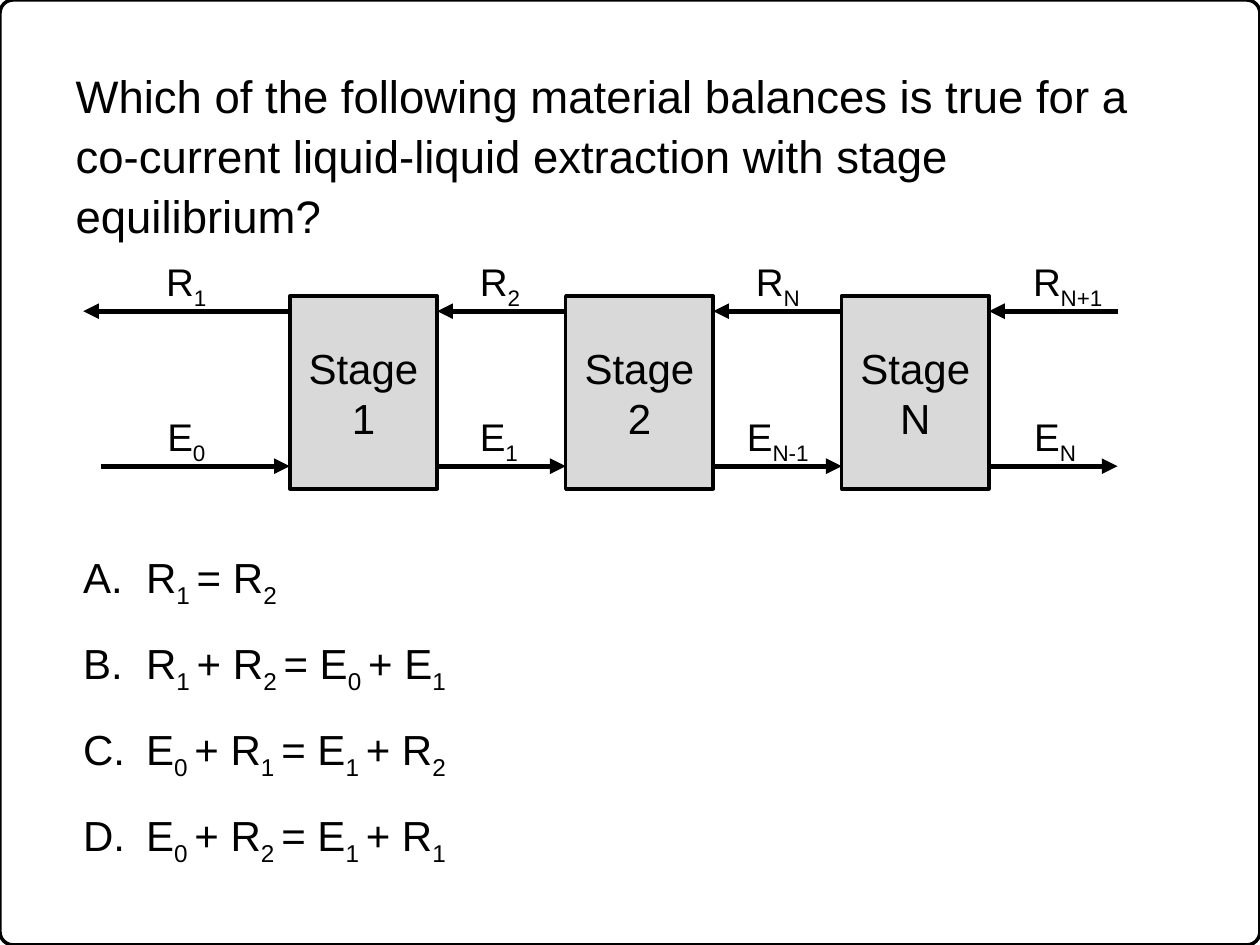
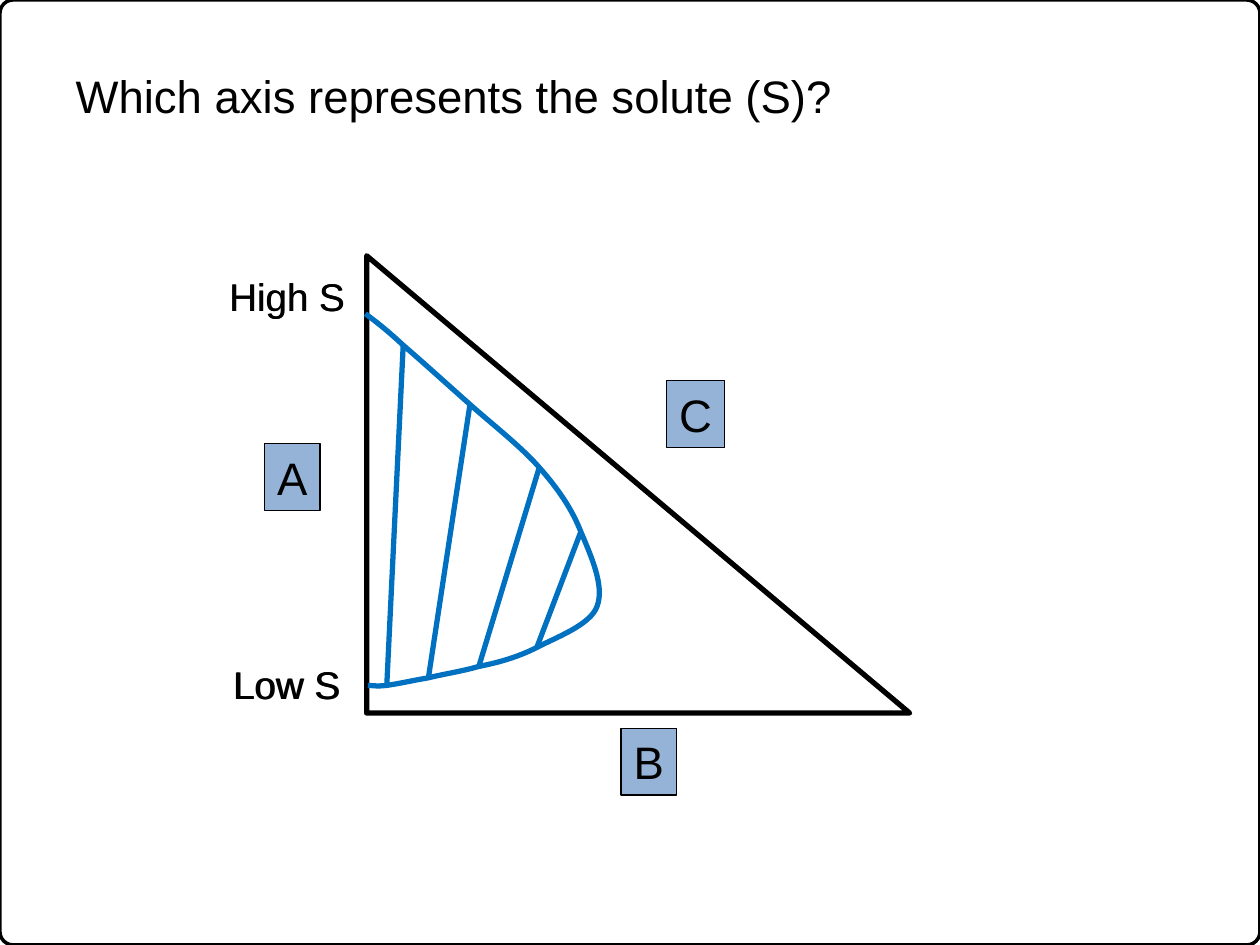
from lxml import etree
from pptx import Presentation
from pptx.dml.color import RGBColor
from pptx.enum.shapes import MSO_CONNECTOR, MSO_SHAPE
from pptx.enum.text import MSO_ANCHOR, MSO_AUTO_SIZE, PP_ALIGN
from pptx.oxml.ns import qn
from pptx.util import Inches, Pt

RECTANGLE = MSO_SHAPE.RECTANGLE
ROUNDED_RECTANGLE = MSO_SHAPE.ROUNDED_RECTANGLE
RIGHT_TRIANGLE = MSO_SHAPE.RIGHT_TRIANGLE
STRAIGHT = MSO_CONNECTOR.STRAIGHT
TOP, MIDDLE = MSO_ANCHOR.TOP, MSO_ANCHOR.MIDDLE
LEFT, CENTER = PP_ALIGN.LEFT, PP_ALIGN.CENTER
NO_AUTOFIT = MSO_AUTO_SIZE.NONE

BLACK, GREY, BLUE, PALE_BLUE = "000000", "D9D9D9", "0070C0", "95B3D7"
FONT = "Arial"
TITLE_ONLY = 5
SUBSCRIPT = "-25000"
NO_MARGINS = dict.fromkeys(("margin_left", "margin_top", "margin_right", "margin_bottom"), 0)


def color(hex_string):
    return RGBColor.from_string(hex_string)


def set_attributes(target, values):
    for name, value in values.items():
        setattr(target, name, value)


class QuizDeck:
    """Holds the shared style and the current slide."""

    def __init__(self):
        self.presentation = Presentation()
        self.presentation.slide_width = Inches(10)
        self.presentation.slide_height = Inches(7.5)
        self.layout = self.presentation.slide_layouts[TITLE_ONLY]
        self.slide = None

    def add_slide(self, question):
        first = self.slide is None
        self.slide = self.presentation.slides.add_slide(self.layout)
        if first:
            self.frame_layout()
        title = self.slide.shapes.title
        self.place(title, 0.6, 0.5, 8.79, 2.5)
        self.set_text(title.text_frame, [question], 26,
                      {"alignment": LEFT, "line_spacing": 1.1},
                      {"vertical_anchor": TOP, "auto_size": NO_AUTOFIT, **NO_MARGINS})

    def frame_layout(self):
        """Give the layout the rounded border that every slide shows."""
        for placeholder in list(self.layout.placeholders)[1:]:
            placeholder.element.getparent().remove(placeholder.element)
        frame = self.shape(ROUNDED_RECTANGLE, 0, 0, 10, 7.5, line_width=2)
        frame.adjustments[0] = 0.014
        self.layout.shapes.element.insert(2, frame.element)

    def place(self, shape, left, top, width, height):
        set_attributes(shape, {"left": Inches(left), "top": Inches(top),
                               "width": Inches(width), "height": Inches(height)})

    def set_text(self, text_frame, lines, size, paragraph_format, frame_format):
        """Set one paragraph a line; pieces between ~ marks are subscripts."""
        set_attributes(text_frame, frame_format)
        for index, line in enumerate(lines):
            paragraph = text_frame.add_paragraph() if index else text_frame.paragraphs[0]
            set_attributes(paragraph, paragraph_format)
            for position, piece in enumerate(line.split("~")):
                if not piece:
                    continue
                run = paragraph.add_run()
                run.text = piece
                set_attributes(run.font, {"name": FONT, "size": Pt(size)})
                run.font.color.rgb = color(BLACK)
                if position % 2:
                    run._r.get_or_add_rPr().set("baseline", SUBSCRIPT)

    def text(self, lines, left, top, width, height, size=22, alignment=LEFT,
             line_spacing=None, **frame_format):
        box = self.slide.shapes.add_textbox(
            Inches(left), Inches(top), Inches(width), Inches(height))
        self.set_text(box.text_frame, lines, size,
                      {"alignment": alignment, "line_spacing": line_spacing},
                      {"word_wrap": True, **frame_format})
        return box

    def lettered_list(self, lines, left, top, width, height):
        box = self.text(lines, left, top, width, height, size=24,
                        line_spacing=1.5, **NO_MARGINS)
        for paragraph in box.text_frame.paragraphs:
            properties = paragraph._p.get_or_add_pPr()
            properties.set("marL", str(Inches(0.5)))
            properties.set("indent", str(-Inches(0.5)))
            bullet_color = etree.SubElement(properties, qn("a:buClr"))
            etree.SubElement(bullet_color, qn("a:srgbClr"), val=BLACK)
            etree.SubElement(properties, qn("a:buAutoNum"), type="alphaUcPeriod")

    def outline(self, shape, line_color, line_width):
        shape.line.color.rgb = color(line_color)
        shape.line.width = Pt(line_width)

    def shape(self, kind, left, top, width, height, fill=None, line_width=3):
        shape = self.slide.shapes.add_shape(
            kind, Inches(left), Inches(top), Inches(width), Inches(height))
        shape.shadow.inherit = False
        if fill:
            shape.fill.solid()
            shape.fill.fore_color.rgb = color(fill)
        else:
            shape.fill.background()
        self.outline(shape, BLACK, line_width)
        return shape

    def box(self, label, left, top, width, height, fill, line_width, size, **frame_format):
        box = self.shape(RECTANGLE, left, top, width, height, fill, line_width)
        self.set_text(box.text_frame, [label], size, {"alignment": CENTER}, frame_format)

    def line(self, start, end, line_color=BLACK, arrow=False):
        connector = self.slide.shapes.add_connector(
            STRAIGHT, *(Inches(length) for length in (*start, *end)))
        self.outline(connector, line_color, 3)
        properties = connector.element.spPr
        if arrow:
            etree.SubElement(properties.find(qn("a:ln")), qn("a:tailEnd"), type="triangle")
        etree.SubElement(properties, qn("a:effectLst"))

    def curve(self, points, line_color):
        """Draw cubic segments: a start point, then three points a segment."""
        corners = [(Inches(x), Inches(y)) for x, y in points]
        builder = self.slide.shapes.build_freeform(*corners[0])
        builder.add_line_segments(corners[1:], close=False)
        curve = builder.convert_to_shape()
        curve.shadow.inherit = False
        curve.fill.background()
        self.outline(curve, line_color, 3)
        geometry = curve.element.find(".//" + qn("a:path"))
        segments = geometry.findall(qn("a:lnTo"))
        for index in range(0, len(segments), 3):
            cubic = etree.SubElement(geometry, qn("a:cubicBezTo"))
            for segment in segments[index:index + 3]:
                cubic.append(segment[0])
                geometry.remove(segment)


def add_balance_slide(deck):
    deck.add_slide("Which of the following material balances is true for a "
                   "co-current liquid-liquid extraction with stage equilibrium?")
    deck.lettered_list(["R~1 ~= R~2",
                        "R~1 ~+ R~2 ~= E~0 ~+ E~1",
                        "E~0 ~+ R~1 ~= E~1 ~+ R~2",
                        "E~0 ~+ R~2 ~= E~1 ~+ R~1"], 0.66, 4.15, 5.17, 2.88)

    first_stage, pitch, stage_width = 2.3, 2.19, 1.17
    for index, name in enumerate("12N"):
        deck.box(f"Stage {name}", first_stage + index * pitch, 2.35, stage_width, 1.53,
                 GREY, 2, 24, vertical_anchor=MIDDLE)

    raffinate = [("R~1", 1.22, 0.52), ("R~2", 3.71, 0.52),
                 ("R~N", 5.9, 0.55), ("R~N+1", 8.1, 0.75)]
    extract = [("E~0", 1.23, 0.5), ("E~1", 3.71, 0.5),
               ("E~N-1", 5.83, 0.69), ("E~N", 8.11, 0.53)]
    for streams, label_top, arrow_y, outer_left, leftward in (
            (raffinate, 2, 2.47, 0.66, True), (extract, 3.23, 3.7, 0.8, False)):
        for index, (label, label_left, label_width) in enumerate(streams):
            right = first_stage + index * pitch
            left = right - pitch + stage_width if index else outer_left
            ends = [(left, arrow_y), (right, arrow_y)]
            deck.line(*(reversed(ends) if leftward else ends), arrow=True)
            deck.text([label], label_left, label_top, label_width, 0.51, word_wrap=False)


def add_solute_slide(deck):
    deck.add_slide("Which axis represents the solute (S)?")
    deck.shape(RIGHT_TRIANGLE, 2.91, 2.03, 4.31, 3.63)

    phase_boundary = [
        (2.9, 2.49),
        (2.98, 2.55), (3.06, 2.61), (3.2, 2.74),
        (3.34, 2.86), (3.55, 3.05), (3.73, 3.21),
        (3.91, 3.37), (4.13, 3.54), (4.28, 3.71),
        (4.43, 3.88), (4.54, 4.04), (4.61, 4.22),
        (4.69, 4.41), (4.8, 4.65), (4.74, 4.81),
        (4.69, 4.96), (4.41, 5.06), (4.26, 5.14),
        (4.1, 5.22), (3.95, 5.26), (3.8, 5.29),
        (3.66, 5.33), (3.52, 5.35), (3.4, 5.38),
        (3.28, 5.4), (3.15, 5.43), (3.07, 5.44),
        (2.99, 5.45), (2.95, 5.44), (2.92, 5.44)]
    deck.curve(phase_boundary, BLUE)
    knots = phase_boundary[::3]
    for index in range(1, 5):
        deck.line(knots[index], knots[-1 - index], BLUE)

    for label, top, left in (("High S", 2.12, 1.72), ("Low S", 5.2, 1.75)):
        deck.text([label], 1.62, top, 1.32, 0.47, alignment=CENTER)
        deck.text([label], left, top, 1.28, 0.47)

    for axis, left, top, width in (("A", 2.1, 3.52, 0.44), ("B", 4.93, 5.78, 0.44),
                                   ("C", 5.29, 3.02, 0.46)):
        deck.box(axis, left, top, width, 0.53, PALE_BLUE, 0.75, 26,
                 vertical_anchor=TOP, word_wrap=False)


def main():
    deck = QuizDeck()
    add_balance_slide(deck)
    add_solute_slide(deck)
    deck.presentation.save("out.pptx")


if __name__ == "__main__":
    main()
